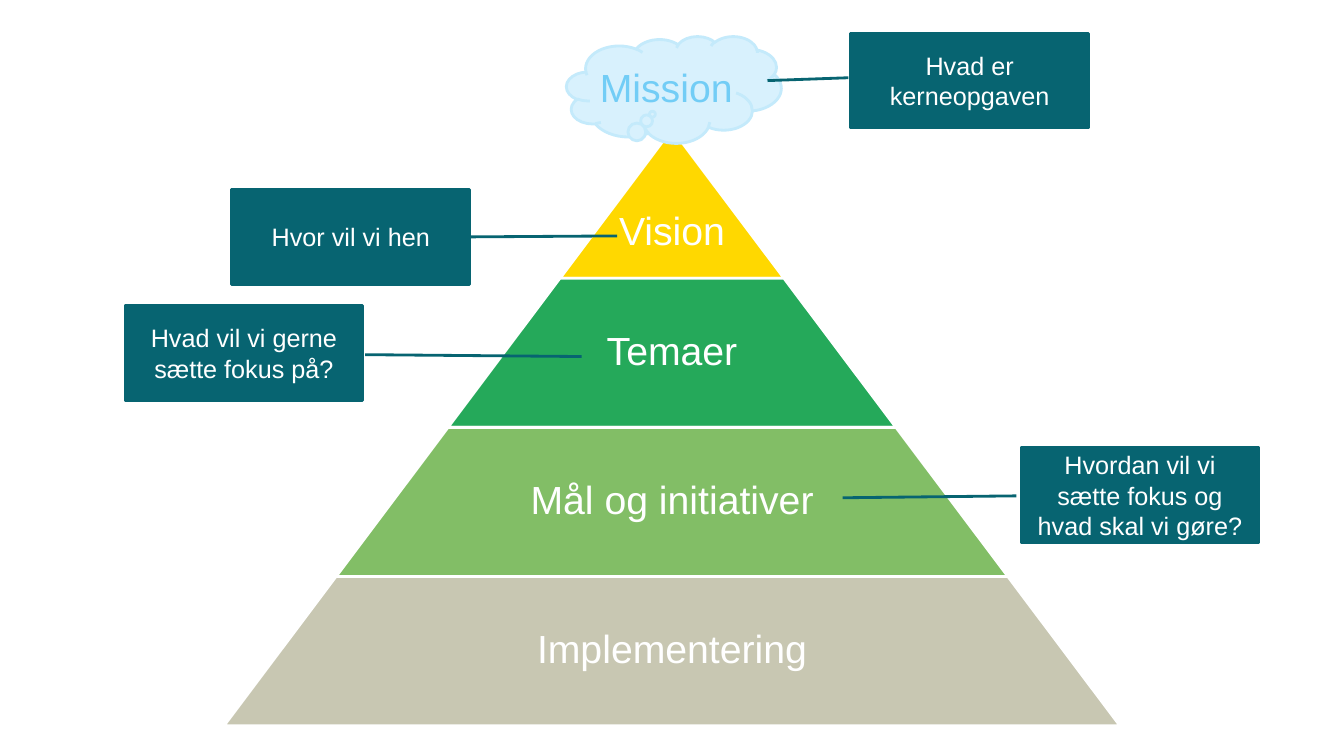
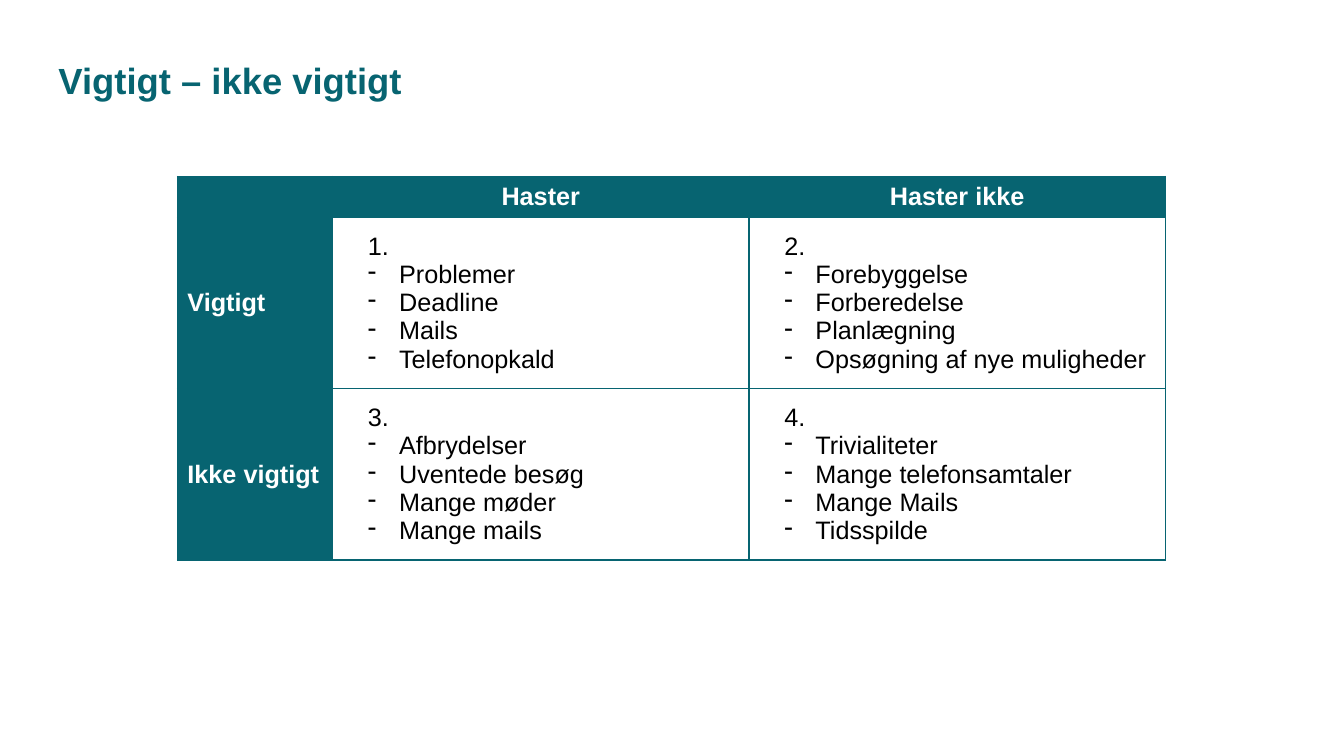
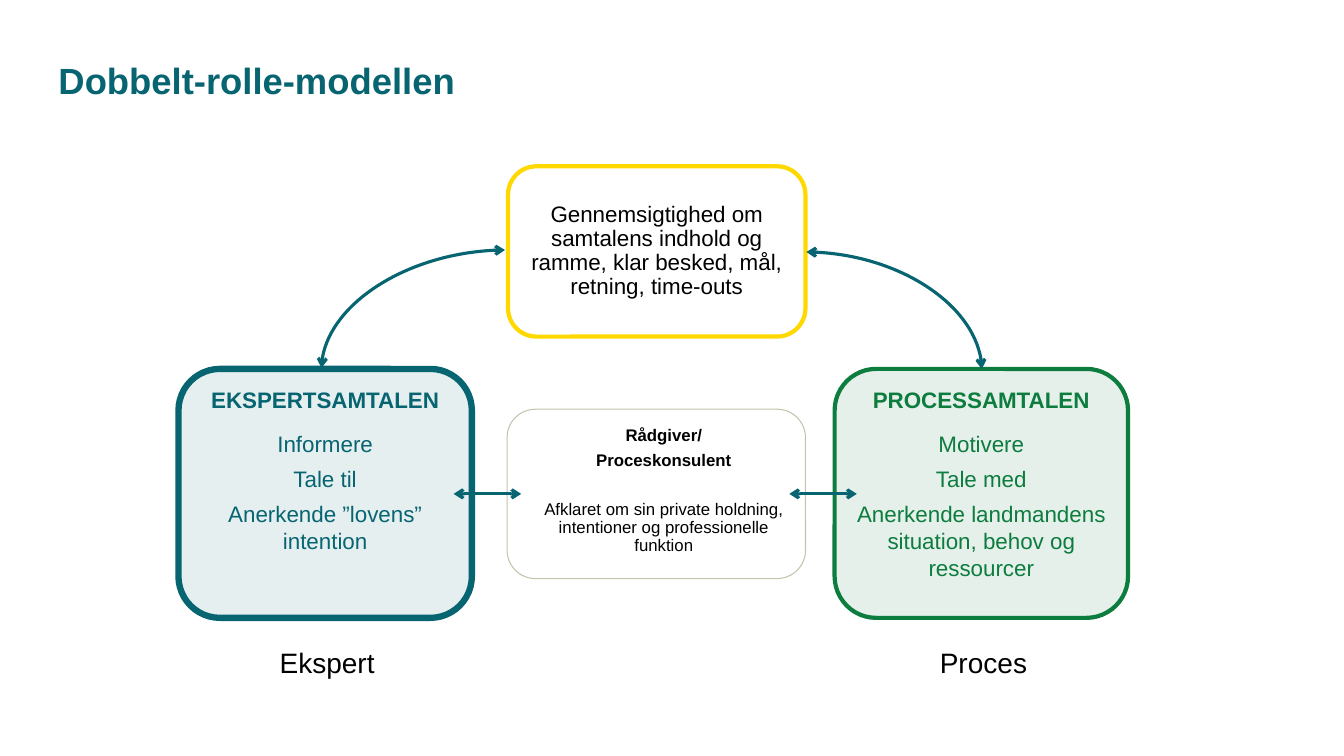
"""Build three slides: a strategy pyramid, a priority table and a double-role model."""
from dataclasses import dataclass
from lxml.etree import SubElement
from pptx import Presentation
from pptx.dml.color import RGBColor
from pptx.enum.shapes import MSO_CONNECTOR, MSO_SHAPE
from pptx.enum.text import MSO_ANCHOR, MSO_AUTO_SIZE, PP_ALIGN
from pptx.oxml.ns import qn
from pptx.util import Emu, Inches, Pt


@dataclass(frozen=True)
class Theme:
    font: str = "Arial"
    teal: str = "076471"
    gold: str = "FFD800"
    green: str = "25A95A"
    lime: str = "82BE66"
    sand: str = "C8C7B2"
    stone: str = "C4C3AE"
    forest: str = "0D7C3F"
    mist: str = "D8F1FD"
    rim: str = "C4EAFB"
    sky: str = "72CDF6"
    white: str = "FFFFFF"
    black: str = "000000"
    tier: int = 28
    title: int = 26
    label: int = 20
    body: int = 18
    role: int = 16
    small: int = 12


def lay(*shares):
    """Turn percentages of width and height, in turn, into lengths."""
    return [Emu(round(n * (high if i % 2 else wide) / 100)) for i, n in enumerate(shares)]


def say(frame, lines, size, color, bold=False, align=PP_ALIGN.CENTER, after=None, pitch=None, dash=False):
    """Write the lines as paragraphs of one style."""
    for i, line in enumerate(lines):
        para = frame.add_paragraph() if i else frame.paragraphs[0]
        para.text = line
        para.alignment = align
        if after is not None:
            para.space_after = Pt(after)
        if pitch:
            para.line_spacing = pitch
        if dash and i:
            props = para._p.get_or_add_pPr()
            props.set("marL", str(Inches(0.31)))
            props.set("indent", str(-Inches(0.31)))
            SubElement(props, qn("a:buChar")).set("char", "-")
        para.font.name = theme.font
        para.font.size = Pt(size)
        para.font.bold = bold
        para.font.color.rgb = RGBColor.from_string(color)


theme = Theme()
deck = Presentation()
deck.slide_width, deck.slide_height = Inches(13.33), Inches(7.5)
wide, high = deck.slide_width, deck.slide_height
looks = []

goals = deck.slides.add_slide(deck.slide_layouts[6]).shapes
tiers = [
    ("Vision", theme.gold),
    ("Temaer", theme.green),
    ("Mål og initiativer", theme.lime),
    ("Implementering", theme.sand),
]
col, row, peak = 100 / 12, 19.73, 17.07
for i, (name, fill) in enumerate(tiers):
    top, base = peak + i * row, peak + (i + 1) * row
    start, *rest = [
        lay(50 + side * col, y)
        for side, y in [(-i, top), (i, top), (i + 1, base), (-i - 1, base)]
    ]
    path = goals.build_freeform(*start)
    path.add_line_segments(rest)
    tier = path.convert_to_shape()
    say(tier.text_frame, [name], theme.tier, theme.white, pitch=0.9)
    if i == 0:
        tier.text_frame.margin_top = Inches(0.63)
    looks.append((tier, fill, theme.white, 2, None))

cloud = goals.add_shape(MSO_SHAPE.CLOUD_CALLOUT, *lay(42.15, 4.8, 15.98, 14.13))
cloud.adjustments[0], cloud.adjustments[1] = -0.1, 0.23
say(cloud.text_frame, ["Mission"], theme.tier, theme.sky)
pad = cloud.text_frame
pad.margin_left = pad.margin_right = pad.margin_top = pad.margin_bottom = 0
looks.append((cloud, theme.mist, theme.rim, 2, None))

notes = [
    ("Hvad vil vi gerne sætte fokus på?", 9.3, 40.4, (0.52, 1.01, 0.54, 1.92)),
    ("Hvor vil vi hen", 17.25, 25.07, (0.5, 1, 0.49, 1.62)),
    ("Hvordan vil vi sætte fokus og hvad skal vi gøre?", 75.97, 59.2, (0.51, -0.02, 0.53, -0.75)),
    ("Hvad er kerneopgaven", 63.3, 4.4, (0.47, -0.01, 0.5, -0.35)),
]
for text, x, y, leader in notes:
    note = goals.add_shape(MSO_SHAPE.LINE_CALLOUT_1, *lay(x, y, 17.7, 12.53))
    for i, n in enumerate(leader):
        note.adjustments[i] = n
    say(note.text_frame, [text], theme.body, theme.white)
    looks.append((note, theme.teal, theme.teal, 2, None))

pages = []
for text in ("Vigtigt – ikke vigtigt", "Dobbelt-rolle-modellen"):
    page = deck.slides.add_slide(deck.slide_layouts[5]).shapes
    head = page.title
    head.left, head.top, head.width, head.height = lay(4.35, 5.73, 76.95, 10.4)
    pad = head.text_frame
    pad.margin_left = pad.margin_right = pad.margin_top = pad.margin_bottom = 0
    pad.auto_size, pad.vertical_anchor = MSO_AUTO_SIZE.NONE, MSO_ANCHOR.MIDDLE
    say(pad, [text], theme.title, theme.teal, True, PP_ALIGN.LEFT, pitch=0.9)
    pages.append(page)
urgent, roles = pages

cells = [
    [[], ["Haster"], ["Haster ikke"]],
    [
        ["Vigtigt"],
        ["1.", "Problemer", "Deadline", "Mails", "Telefonopkald"],
        ["2.", "Forebyggelse", "Forberedelse", "Planlægning", "Opsøgning af nye muligheder"],
    ],
    [
        ["Ikke vigtigt"],
        ["3.", "Afbrydelser", "Uventede besøg", "Mange møder", "Mange mails"],
        ["4.", "Trivialiteter", "Mange telefonsamtaler", "Mange Mails", "Tidsspilde"],
    ],
]
grid = urgent.add_table(3, 3, *lay(13.2, 23.33, 73.5, 50.6)).table
for line, size in zip(grid.columns, (11.55, 30.98, 30.98)):
    line.width = lay(size)[0]
for line, size in zip(grid.rows, (5.4, 22.6, 22.6)):
    line.height = lay(0, size)[1]
for r, texts in enumerate(cells):
    for c, lines in enumerate(texts):
        cell = grid.cell(r, c)
        inner = r > 0 and c > 0
        props = cell._tc.get_or_add_tcPr()
        for side in ("L", "R", "T", "B"):
            edge = SubElement(props, qn(f"a:ln{side}"))
            edge.set("w", str(Pt(1)))
            SubElement(SubElement(edge, qn("a:solidFill")), qn("a:srgbClr")).set("val", theme.teal)
        cell.fill.solid()
        cell.fill.fore_color.rgb = RGBColor.from_string(theme.white if inner else theme.teal)
        cell.vertical_anchor = MSO_ANCHOR.TOP if inner else MSO_ANCHOR.MIDDLE
        if inner:
            cell.margin_left = Inches(0.35)
            cell.margin_right = cell.margin_top = cell.margin_bottom = Inches(0.15)
        say(
            cell.text_frame, lines, theme.body, theme.black if inner else theme.white,
            not inner, PP_ALIGN.LEFT if r else PP_ALIGN.CENTER, dash=inner,
        )

clear = "Gennemsigtighed om samtalens indhold og ramme, klar besked, mål, retning, time-outs"
guide = ["Rådgiver/", "Proceskonsulent", "Afklaret om sin private holdning, intentioner og professionelle funktion"]
expert = ["EKSPERTSAMTALEN", "Informere", "Tale til", "Anerkende ”lovens” intention"]
process = ["PROCESSAMTALEN", "Motivere", "Tale med", "Anerkende landmandens situation, behov og ressourcer"]
boxes = [
    ([clear], (37.8, 22, 22.13, 22.53), theme.role, theme.black, 0.9, theme.white, theme.gold, 3, None),
    (process, (62.1, 48.8, 21.83, 32.93), theme.role, theme.forest, None, theme.forest, theme.forest, 3, 11),
    (guide, (37.73, 54.13, 22.2, 22.4), theme.small, theme.black, 0.9, None, theme.stone, 0.75, None),
    (expert, (13.28, 48.8, 21.83, 32.93), theme.role, theme.teal, None, theme.teal, theme.teal, 4.5, 10),
]
for lines, spot, size, color, pitch, *look in boxes:
    box = roles.add_shape(MSO_SHAPE.ROUNDED_RECTANGLE, *lay(*spot))
    pad = box.text_frame
    pad.margin_left = pad.margin_right = pad.margin_top = pad.margin_bottom = Inches(0.05)
    say(pad, lines, size, color, after=5 if pitch else 6, pitch=pitch)
    paras = pad.paragraphs
    if lines is guide:
        pad.margin_left, pad.margin_right, pad.margin_bottom = Inches(0.15), 0, Inches(0.11)
        paras[0].font.bold = paras[1].font.bold = True
        paras[2].space_before = Pt(17)
    elif len(lines) > 1:
        paras[0].font.bold = True
        paras[0].space_after = Pt(12)
    looks.append((box, *look))

for shape, fill, edge, weight, alpha in looks:
    shape.shadow.inherit = False
    if fill:
        shape.fill.solid()
        shape.fill.fore_color.rgb = RGBColor.from_string(fill)
    else:
        shape.fill.background()
    if alpha:
        tint = shape._element.spPr.find(qn("a:solidFill"))[0]
        SubElement(tint, qn("a:alpha")).set("val", str(alpha * 1000))
    shape.line.color.rgb = RGBColor.from_string(edge)
    shape.line.width = Pt(weight)
    shape.text_frame.word_wrap = True
    shape.text_frame.vertical_anchor = MSO_ANCHOR.TOP if alpha else MSO_ANCHOR.MIDDLE

links = [
    (MSO_CONNECTOR.CURVE, (60, 33.33, 73.05, 48.8)),
    (MSO_CONNECTOR.CURVE, (37.58, 33.07, 23.93, 48.67)),
    (MSO_CONNECTOR.STRAIGHT, (38.78, 65.33, 33.75, 65.33)),
    (MSO_CONNECTOR.STRAIGHT, (63.75, 65.33, 58.73, 65.33)),
]
for kind, ends in links:
    link = roles.add_connector(kind, *lay(*ends))
    link.line.color.rgb = RGBColor.from_string(theme.teal)
    link.line.width = Pt(2.25)
    props = link._element.spPr
    if kind == MSO_CONNECTOR.CURVE:
        props.find(qn("a:prstGeom")).set("prst", "curvedConnector2")
    for end in ("a:headEnd", "a:tailEnd"):
        SubElement(props.find(qn("a:ln")), qn(end)).set("type", "arrow")
    SubElement(props, qn("a:effectLst"))

for text, x, size in (("Ekspert", 18.45, 11.48), ("Proces", 68.03, 9.98)):
    pad = roles.add_textbox(*lay(x, 85.87, size, 4.13)).text_frame
    pad.word_wrap = False
    pad.margin_left = Inches(0.04)
    pad.margin_right = pad.margin_top = pad.margin_bottom = 0
    say(pad, [text], theme.label, theme.black, pitch=Pt(21.6))

deck.save("out.pptx")
